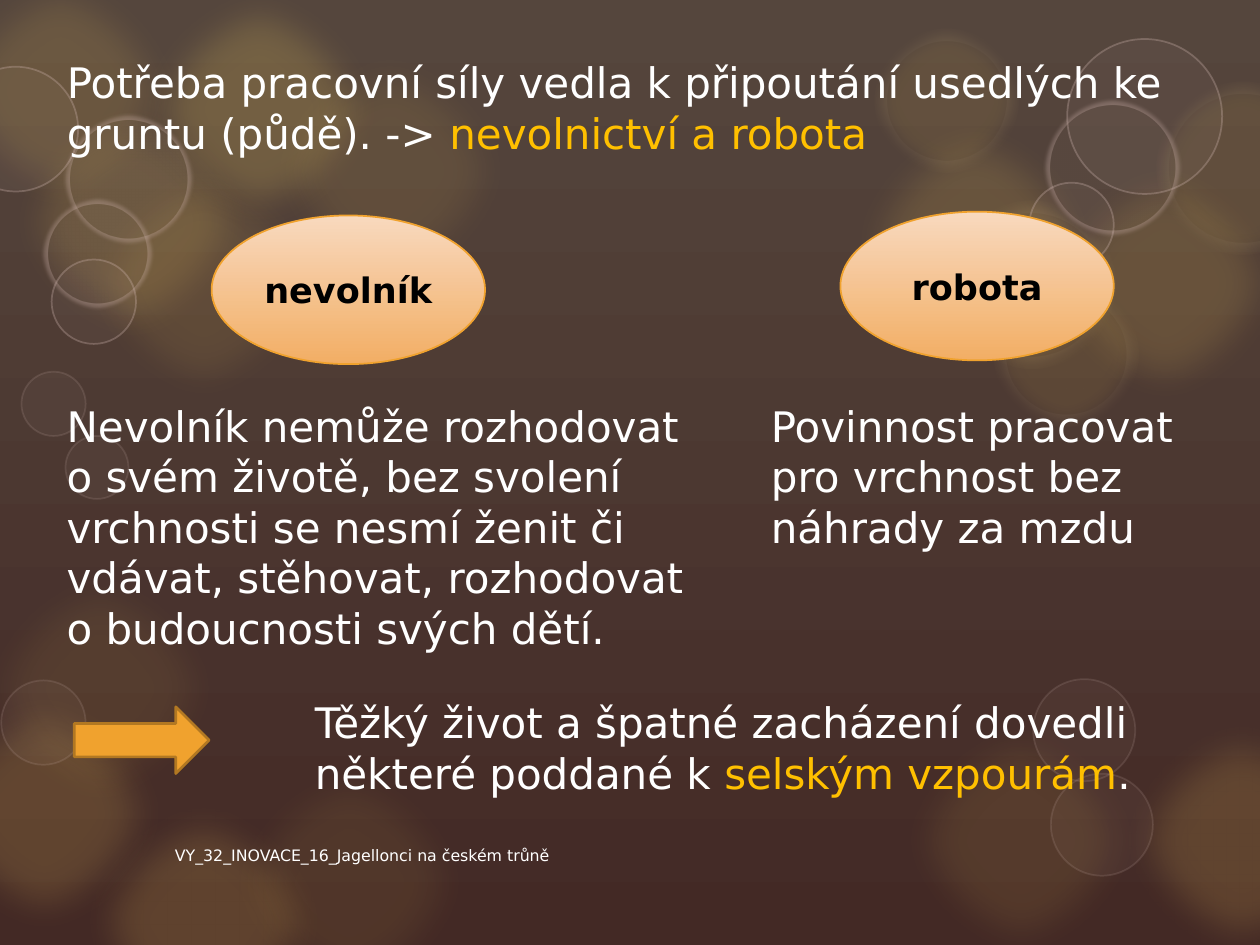
"""Build the slide on serfdom and compulsory labour over a backdrop of soft circles."""
from dataclasses import dataclass
from typing import NamedTuple

from lxml import etree
from pptx import Presentation
from pptx import util as u
from pptx.dml.color import RGBColor
from pptx.enum import shapes, text
from pptx.oxml.ns import qn


@dataclass(frozen=True)
class Theme:
    """Colours and type sizes of the slide."""

    font: str = "DejaVu Sans"
    text: str = "FFFFFF"
    label: str = "000000"
    accent: str = "FFC000"
    background: tuple[str, str] = ("55463D", "432925")
    bubble: tuple[str, str] = ("F8D9BE", "F2AE65")
    bubble_edge: str = "F0A22E"
    arrow_edge: str = "B27822"
    gold: str = "F3CD60"
    cream: str = "FDF5DF"
    rose: str = "D3B9B3"
    body_size: int = 24
    label_size: int = 20
    code_size: int = 9


class Box(NamedTuple):
    """Position and size in inches."""

    left: float
    top: float
    width: float
    height: float

    def lengths(self) -> list[int]:
        return [u.Inches(side) for side in self]


class Circle(NamedTuple):
    """One backdrop circle; line and soft edge are in points, opacities in percent."""

    left: float
    top: float
    size: float
    colour: str
    opacity: int
    soft: float
    edge: str = ""
    edge_width: float = 0
    edge_opacity: int = 0


class Passage(NamedTuple):
    """A block of text made of (wording, is highlighted) pieces."""

    box: Box
    pieces: list[tuple[str, bool]]
    size: int
    anchor: text.MSO_ANCHOR = text.MSO_ANCHOR.TOP


class Term(NamedTuple):
    """A key term in an oval."""

    wording: str
    left: float
    top: float


THEME = Theme()
GLOWS = [
    (-0.25, 4.42, 8), (0.57, 1.2, 10), (2.05, 0.31, 10), (0.57, 6.27, 16),
    (-0.56, -0.32, 14), (1.01, -0.18, 20), (0, 0.72, 15), (8.2, 1.2, 15),
    (8.81, 5.62, 16), (-0.69, 5.41, 16), (6.69, 0.86, 15), (7.06, 5.62, 10),
    (1.73, 5.96, 8),
]
HALOS = [(9.18, 0.65, 1.37), (6.94, 0.23, 1.14), (7.52, 1.59, 1.33), (7.89, 2.24, 1.14)]
RINGS = {
    (1, 15): [(0.01, 5.4, 0.67), (8.34, 6.14, 0.81), (8.2, 5.39, 0.81),
              (0.17, 2.95, 0.51), (0.52, 3.46, 0.5)],
    (1, 30): [(-0.37, 0.53, 0.99), (0.41, 2.06, 0.67), (8.47, 0.31, 1.23),
              (8.17, 1.45, 0.67)],
    (5, 30): [(0.52, 0.92, 1), (0.35, 1.59, 0.85), (8.3, 0.8, 1.06)],
}
HEADING = Passage(
    Box(0.43, 0.4, 9.06, 0.91),
    [("Potřeba pracovní síly vedla k připoutání usedlých ke gruntu (půdě). -> ", False),
     ("nevolnictví a robota", True)],
    THEME.body_size,
)
PASSAGES = [
    Passage(Box(0.43, 3.13, 5.12, 2.12),
            [("Nevolník nemůže rozhodovat o svém životě, bez svolení vrchnosti se nesmí "
              "ženit či vdávat, stěhovat, rozhodovat o budoucnosti svých dětí.", False)],
            THEME.body_size),
    Passage(Box(6.02, 3.13, 3.46, 1.31),
            [("Povinnost pracovat pro vrchnost bez náhrady za mzdu", False)],
            THEME.body_size),
    Passage(Box(2.4, 5.48, 7.48, 0.91),
            [("Těžký život a špatné zacházení dovedli některé poddané k ", False),
             ("selským vzpourám", True), (".", False)],
            THEME.body_size),
    Passage(Box(1.29, 6.51, 5.75, 0.4),
            [("VY_32_INOVACE_16_Jagellonci na českém trůně", False)],
            THEME.code_size, text.MSO_ANCHOR.BOTTOM),
]
TERMS = [Term("nevolník", 1.68, 1.71), Term("robota", 6.67, 1.68)]


def backdrop() -> list[Circle]:
    """List the backdrop circles from back to front."""
    glows = [Circle(x, y, 2.09, THEME.gold, opacity, 20) for x, y, opacity in GLOWS]
    halos = [Circle(*place, THEME.gold, 10, 10, THEME.cream, 14, 6) for place in HALOS]
    rings = [Circle(*place, THEME.rose, 5, 2.5 if width > 1 else 0, THEME.rose, width, edge)
             for (width, edge), places in RINGS.items() for place in places]
    return glows + halos + rings


def paint(fill, colour: str, opacity: int = 100) -> None:
    """Fill with one colour at the given opacity."""
    fill.solid()
    fill.fore_color.rgb = RGBColor.from_string(colour)
    if opacity < 100:
        tint = fill._xPr.find(qn("a:solidFill"))[0]
        etree.SubElement(tint, qn("a:alpha")).set("val", str(opacity * 1000))


def shade(fill, colours: tuple[str, str]) -> None:
    """Fill with a gradient from top to bottom."""
    fill.gradient()
    fill.gradient_angle = 270
    for stop, position, colour in zip(fill.gradient_stops, (0, 1), colours):
        stop.position = position
        stop.color.rgb = RGBColor.from_string(colour)


def draw_circle(slide, circle: Circle) -> None:
    """Draw a backdrop circle."""
    box = Box(circle.left, circle.top, circle.size, circle.size)
    disc = slide.shapes.add_shape(shapes.MSO_SHAPE.OVAL, *box.lengths())
    disc.shadow.inherit = False
    paint(disc.fill, circle.colour, circle.opacity)
    if circle.edge:
        paint(disc.line.fill, circle.edge, circle.edge_opacity)
        disc.line.width = u.Pt(circle.edge_width)
    else:
        disc.line.fill.background()
    if circle.soft:
        effects = disc._element.spPr.find(qn("a:effectLst"))
        etree.SubElement(effects, qn("a:softEdge")).set("rad", str(u.Pt(circle.soft)))


def style(run, size: int, colour: str, bold: bool = False) -> None:
    """Format one run of text."""
    run.font.name, run.font.size, run.font.bold = THEME.font, u.Pt(size), bold
    run.font.color.rgb = RGBColor.from_string(colour)


def write(holder, passage: Passage) -> None:
    """Place a passage in a text box or placeholder."""
    holder.left, holder.top, holder.width, holder.height = passage.box.lengths()
    frame = holder.text_frame
    frame.word_wrap, frame.auto_size = True, text.MSO_AUTO_SIZE.NONE
    frame.vertical_anchor = passage.anchor
    paragraph = frame.paragraphs[0]
    paragraph.alignment = text.PP_ALIGN.LEFT
    for wording, highlighted in passage.pieces:
        run = paragraph.add_run()
        run.text = wording
        style(run, passage.size, THEME.accent if highlighted else THEME.text)


def draw_term(slide, term: Term) -> None:
    """Draw a key term in its oval."""
    bubble = slide.shapes.add_shape(
        shapes.MSO_SHAPE.OVAL, *Box(term.left, term.top, 2.17, 1.18).lengths())
    bubble.shadow.inherit = False
    shade(bubble.fill, THEME.bubble)
    paint(bubble.line.fill, THEME.bubble_edge)
    bubble.line.width = u.Pt(1)
    bubble.text_frame.text = term.wording
    bubble.text_frame.vertical_anchor = text.MSO_ANCHOR.MIDDLE
    paragraph = bubble.text_frame.paragraphs[0]
    paragraph.alignment = text.PP_ALIGN.CENTER
    style(paragraph.runs[0], THEME.label_size, THEME.label, bold=True)


def draw_arrow(slide, box: Box) -> None:
    """Draw the arrow that leads to the conclusion."""
    arrow = slide.shapes.add_shape(shapes.MSO_SHAPE.RIGHT_ARROW, *box.lengths())
    arrow.shadow.inherit = False
    paint(arrow.fill, THEME.bubble_edge)
    paint(arrow.line.fill, THEME.arrow_edge)
    arrow.line.width = u.Pt(1.5)


def main() -> None:
    """Build and save the presentation."""
    deck = Presentation()
    deck.slide_width, deck.slide_height = u.Inches(10), u.Inches(7.5)
    slide = deck.slides.add_slide(deck.slide_layouts[5])
    shade(slide.background.fill, THEME.background)
    for circle in backdrop():
        draw_circle(slide, circle)
    for term in TERMS:
        draw_term(slide, term)
    draw_arrow(slide, Box(0.59, 5.61, 1.07, 0.53))
    heading = slide.shapes.title
    write(heading, HEADING)
    slide.shapes._spTree.append(heading._element)
    for passage in PASSAGES:
        write(slide.shapes.add_textbox(*passage.box.lengths()), passage)
    deck.save("out.pptx")


if __name__ == "__main__":
    main()
